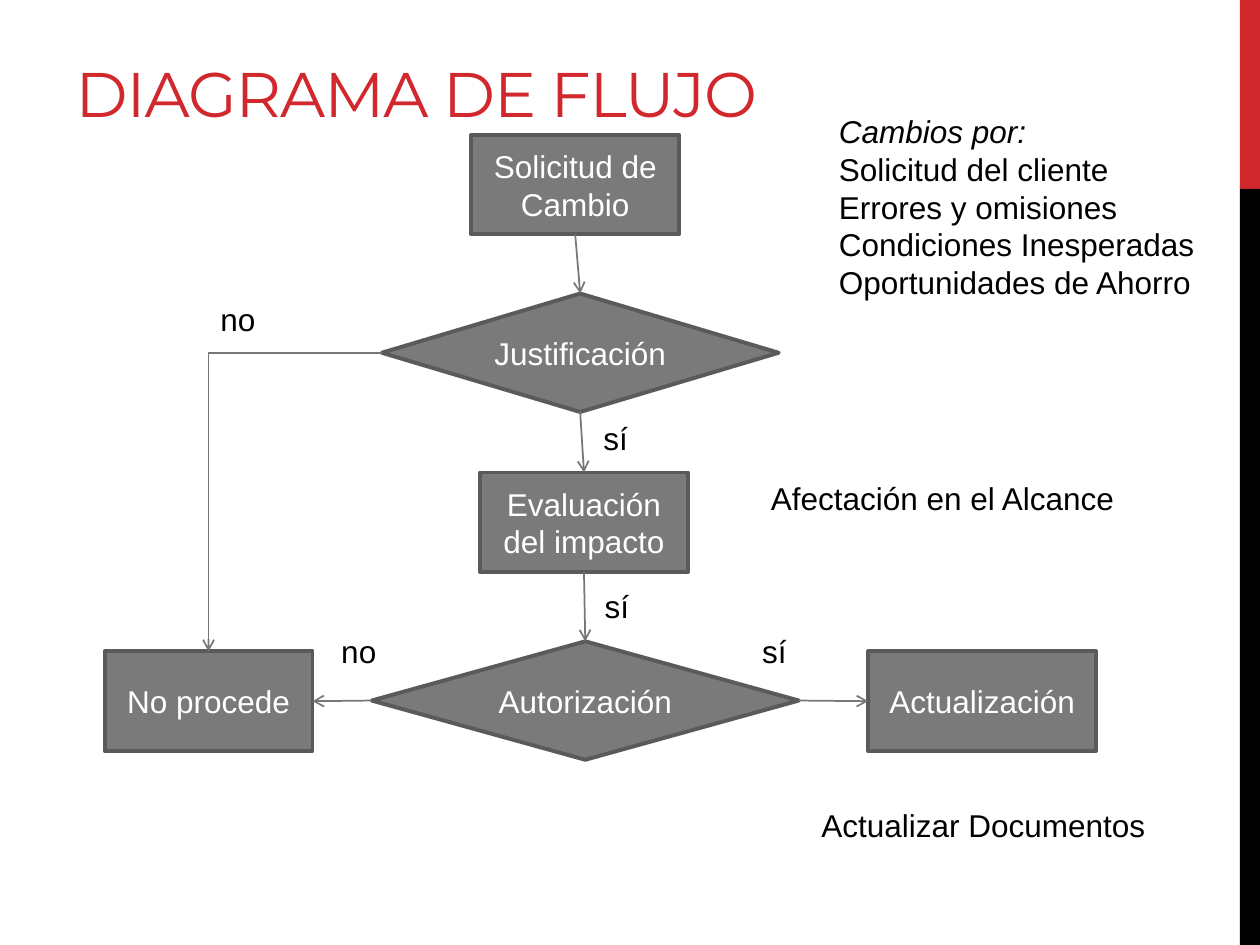
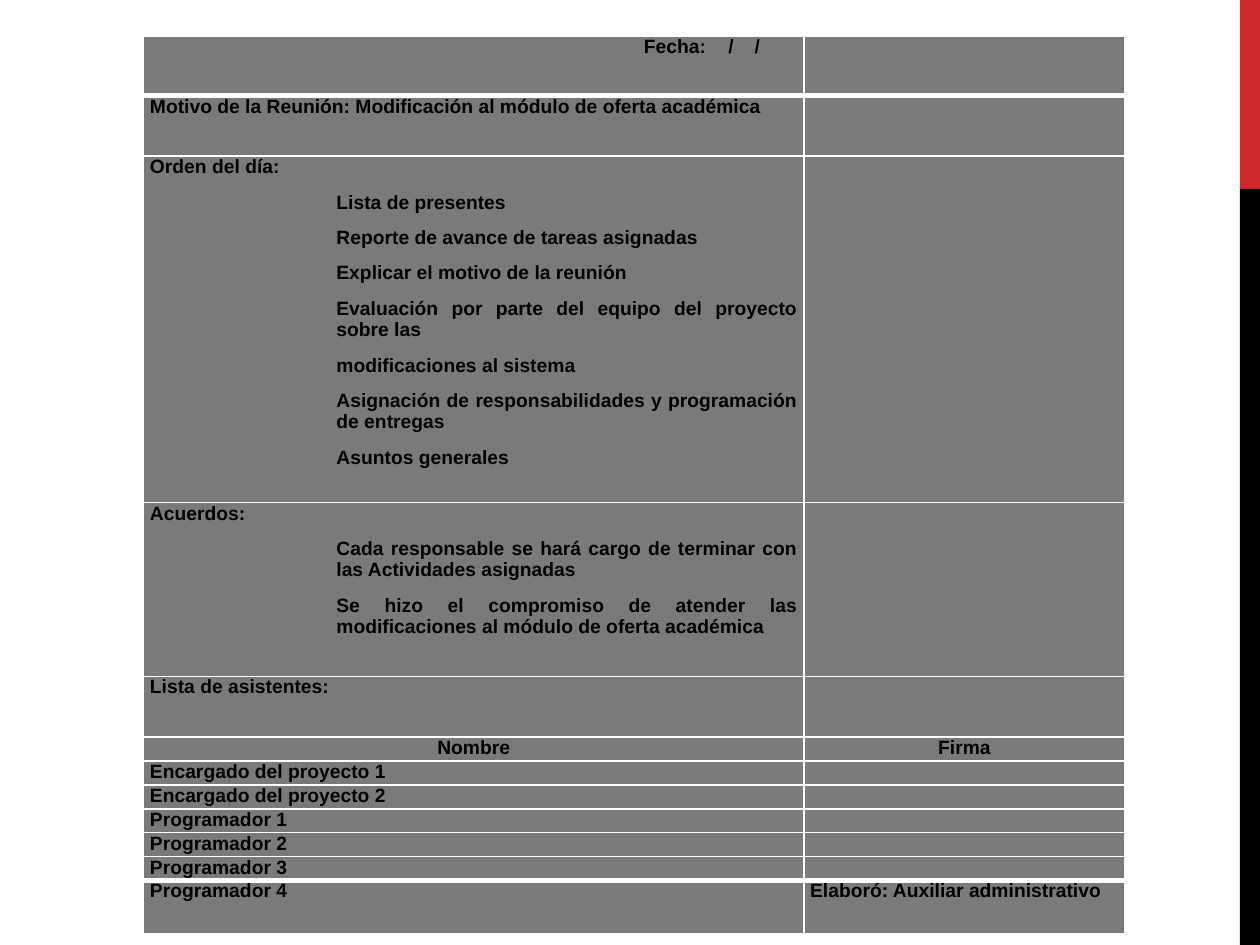
from lxml.etree import SubElement
from pptx import Presentation
from pptx.dml.color import RGBColor
from pptx.enum.shapes import MSO_CONNECTOR as Link, MSO_SHAPE as Shape
from pptx.enum.text import MSO_ANCHOR as Anchor, MSO_AUTO_SIZE as AutoSize, PP_ALIGN as Align
from pptx.oxml.ns import qn
from pptx.util import Inches, Pt

RED = RGBColor(0xD1, 0x28, 0x2E)
BLACK = RGBColor(0, 0, 0)
WHITE = RGBColor(0xFF, 0xFF, 0xFF)
GREY = RGBColor(0x7A, 0x7A, 0x7A)
OUTLINE = RGBColor(0x5A, 0x5A, 0x5A)
ARROW = RGBColor(0x77, 0x77, 0x77)
BODY_FONT, TITLE_FONT = "Arial", "Montserrat"

# Connection sites of flowchart shapes
TOP, LEFT, BOTTOM, RIGHT = range(4)

# Minutes table: left cell lines (the first one is the heading), right cell, height
AGENDA = [
    "Orden del día:",
    "Lista de presentes",
    "Reporte de avance de tareas asignadas",
    "Explicar el motivo de la reunión",
    "Evaluación por parte del equipo del proyecto sobre las",
    "modificaciones al sistema",
    "Asignación de responsabilidades y programación de entregas",
    "Asuntos generales",
]
AGREEMENTS = [
    "Acuerdos:",
    "Cada responsable se hará cargo de terminar con las Actividades asignadas",
    "Se hizo el compromiso de atender las modificaciones al módulo de oferta académica",
]
ATTENDEES = ["Encargado del proyecto 1", "Encargado del proyecto 2",
             "Programador 1", "Programador 2", "Programador 3"]
MINUTES = [
    (["Fecha:\t/\t/"], "", 0.47),
    (["Motivo de la Reunión: Modificación al módulo de oferta académica"], "", 0.48),
    (AGENDA, "", 2.75),
    (AGREEMENTS, "", 1.38),
    (["Lista de asistentes:"], "", 0.48),
    (["Nombre"], "Firma", 0.19),
    *[([name], "", 0.19) for name in ATTENDEES],
    (["Programador 4"], "Elaboró: Auxiliar administrativo", 0.42),
]
COLUMNS = (5.24, 2.55)


def write_text(frame, lines, size=18, font=BODY_FONT, color=BLACK, bold=False,
               italic_lines=(), align=Align.LEFT, anchor=Anchor.TOP, space=0, tracking=None):
    """Fill a text frame with one paragraph per line."""
    frame.word_wrap = True
    frame.vertical_anchor = anchor
    for index, line in enumerate(lines):
        para = frame.paragraphs[0] if index == 0 else frame.add_paragraph()
        para.alignment = align
        para.space_before = para.space_after = Pt(space)
        span = para.add_run()
        span.text = line
        span.font.name, span.font.size = font, Pt(size)
        span.font.bold, span.font.italic = bold, index in italic_lines
        span.font.color.rgb = color
        if tracking is not None:
            span._r.get_or_add_rPr().set("spc", str(int(tracking * 100)))


def add_block(page, kind, place, fill, outline=None):
    block = page.shapes.add_shape(kind, *map(Inches, place))
    block.shadow.inherit = False
    block.fill.solid()
    block.fill.fore_color.rgb = fill
    if outline is None:
        block.line.fill.background()
    else:
        block.line.color.rgb = outline
        block.line.width = Pt(2.25)
    return block


def add_page(deck, layout):
    """Add a slide with the red and black side band."""
    page = deck.slides.add_slide(deck.slide_layouts[layout])
    add_block(page, Shape.RECTANGLE, (9.84, 0, 0.16, 1.5), RED)
    add_block(page, Shape.RECTANGLE, (9.84, 1.5, 0.16, 6), BLACK)
    return page


def add_title(page, words):
    title = page.shapes.title
    title.left, title.top, title.width, title.height = map(Inches, (0.5, 0.17, 6.33, 0.91))
    title.text_frame.auto_size = AutoSize.NONE
    write_text(title.text_frame, [words], size=36, font=TITLE_FONT, color=RED,
               anchor=Anchor.BOTTOM, tracking=-0.6)


def add_step(page, kind, words, *place):
    step = add_block(page, kind, place, GREY, OUTLINE)
    write_text(step.text_frame, [words], color=WHITE, align=Align.CENTER, anchor=Anchor.MIDDLE)
    return step


def add_label(page, lines, *place, **style):
    box = page.shapes.add_textbox(*map(Inches, place))
    write_text(box.text_frame, lines, **style)


def site_point(step, site):
    x = {LEFT: step.left, RIGHT: step.left + step.width}.get(site, step.left + step.width // 2)
    y = {TOP: step.top, BOTTOM: step.top + step.height}.get(site, step.top + step.height // 2)
    return x, y


def add_arrow(page, start, start_site, end, end_site, bent=False):
    arrow = page.shapes.add_connector(Link.ELBOW if bent else Link.STRAIGHT,
                                      *site_point(start, start_site), *site_point(end, end_site))
    arrow.begin_connect(start, start_site)
    arrow.end_connect(end, end_site)
    arrow.line.color.rgb = ARROW
    arrow.line.width = Pt(1)
    properties = arrow._element.spPr
    if bent:  # a single corner
        properties.find(qn("a:prstGeom")).set("prst", "bentConnector2")
    SubElement(properties.find(qn("a:ln")), qn("a:tailEnd"), type="arrow")
    SubElement(properties, qn("a:effectLst"))


def set_borders(cell, top=1, bottom=1):
    """Draw white cell borders; widths in points."""
    properties = cell._tc.get_or_add_tcPr()
    sides = {"lnL": 1, "lnR": 1, "lnT": top, "lnB": bottom}
    for index, (side, width) in enumerate(sides.items()):
        line = SubElement(properties, qn(f"a:{side}"), w=str(Pt(width)))
        fill = SubElement(line, qn("a:solidFill"))
        SubElement(fill, qn("a:srgbClr"), val=str(WHITE))
        properties.insert(index, line)


def fill_cell(cell, lines, **style):
    cell.fill.solid()
    cell.fill.fore_color.rgb = GREY
    cell.margin_left = cell.margin_right = Inches(0.05)
    cell.margin_top = cell.margin_bottom = 0
    if any(lines):
        write_text(cell.text_frame, lines, **{"size": 11, "bold": True, "space": 4, **style})
        for para in cell.text_frame.paragraphs[1:]:
            para._p.get_or_add_pPr().set("marL", str(Inches(1.48)))
    else:  # keep empty cells from stretching the row
        SubElement(cell.text_frame.paragraphs[0]._p, qn("a:endParaRPr"), sz="1100")


def place_date(cell):
    """Line up the date slashes with tab stops."""
    cell.margin_left = Inches(3.97)
    tabs = SubElement(cell.text_frame.paragraphs[0]._p.get_or_add_pPr(), qn("a:tabLst"))
    for position in (0.67, 0.88):
        SubElement(tabs, qn("a:tab"), pos=str(Inches(position)), algn="l")


def add_minutes(page):
    heights = [height for *_, height in MINUTES]
    frame = page.shapes.add_table(len(MINUTES), len(COLUMNS), Inches(1.14), Inches(0.29),
                                  Inches(sum(COLUMNS)), Inches(sum(heights)))
    table = frame.table
    table.first_row = table.horz_banding = False
    for column, width in zip(table.columns, COLUMNS):
        column.width = Inches(width)
    last = len(MINUTES) - 1
    for index, (lines, right, height) in enumerate(MINUTES):
        table.rows[index].height = Inches(height)
        align = (Align.LEFT if index == 0 else
                 Align.CENTER if right == "Firma" else Align.JUSTIFY)
        fill_cell(table.cell(index, 0), lines, align=align)
        if index == last:
            fill_cell(table.cell(index, 1), [right], space=0, anchor=Anchor.BOTTOM)
            table.cell(index, 1).margin_bottom = Inches(0.04)
        else:
            fill_cell(table.cell(index, 1), [right], align=align)
        for cell in table.rows[index].cells:
            set_borders(cell, top=3 if index in (1, last) else 1,
                        bottom=3 if index in (0, last - 1) else 1)
    place_date(table.cell(0, 0))


def add_flowchart(page):
    # Steps
    process, decision = Shape.FLOWCHART_PROCESS, Shape.FLOWCHART_DECISION
    request = add_step(page, process, "Solicitud de Cambio", 3.74, 1.07, 1.65, 0.79)
    reason = add_step(page, decision, "Justificación", 3.03, 2.33, 3.15, 0.94)
    impact = add_step(page, process, "Evaluación del impacto", 3.81, 3.75, 1.65, 0.79)
    approval = add_step(page, decision, "Autorización", 2.95, 5.09, 3.39, 0.94)
    rejected = add_step(page, process, "No procede", 0.83, 5.17, 1.65, 0.79)
    update = add_step(page, process, "Actualización", 6.89, 5.17, 1.81, 0.79)

    # Arrows
    for start, end in ((request, reason), (reason, impact), (impact, approval)):
        add_arrow(page, start, BOTTOM, end, TOP)
    add_arrow(page, approval, LEFT, rejected, RIGHT)
    add_arrow(page, approval, RIGHT, update, LEFT)
    add_arrow(page, reason, LEFT, rejected, TOP, bent=True)

    # Branch labels and notes
    for answer, left, top in (("no", 1.65, 2.33), ("no", 2.61, 4.97), ("sí", 5.95, 4.97),
                              ("sí", 4.7, 4.61), ("sí", 4.69, 3.28)):
        add_label(page, [answer], left, top, 0.69, 0.4)
    add_label(page, ["Afectación en el Alcance"], 6.02, 3.75, 2.99, 0.4)
    add_label(page, ["Actualizar Documentos"], 6.42, 6.35, 2.99, 0.4)
    add_label(page, ["Cambios por:", "Solicitud del cliente", "Errores y omisiones",
                     "Condiciones Inesperadas", "Oportunidades de Ahorro"],
              6.56, 0.84, 3.09, 1.62, italic_lines=(0,))


def main():
    deck = Presentation()
    deck.slide_width, deck.slide_height = Inches(10), Inches(7.5)

    flow_page = add_page(deck, layout=5)
    add_title(flow_page, "DIAGRAMA DE FLUJO")
    add_flowchart(flow_page)

    minutes_page = add_page(deck, layout=6)
    add_minutes(minutes_page)

    deck.save("out.pptx")


if __name__ == "__main__":
    main()
